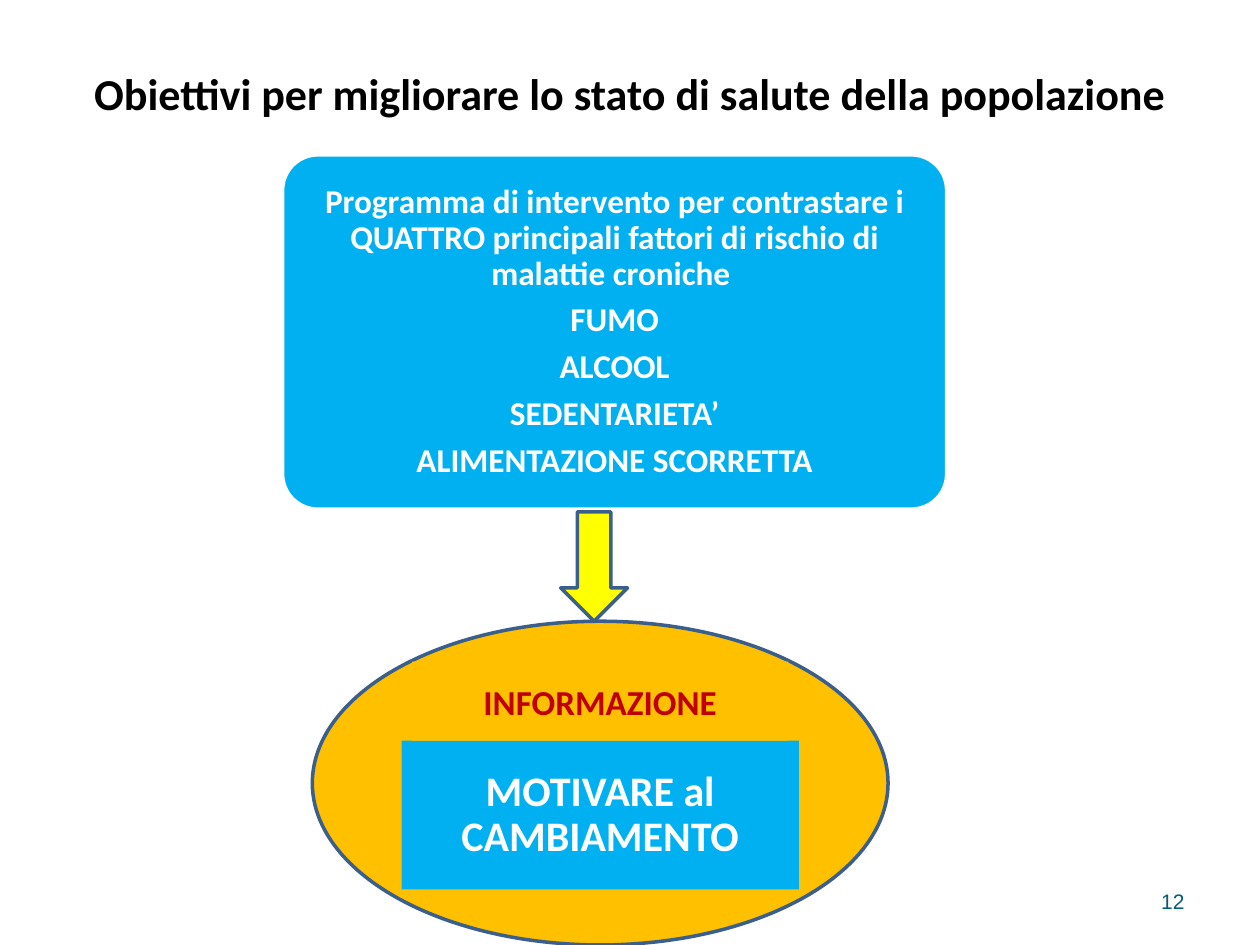
from pptx import Presentation
from pptx.dml.color import RGBColor
from pptx.enum.shapes import MSO_SHAPE as Shape
from pptx.enum.text import MSO_ANCHOR as Anchor, MSO_AUTO_SIZE as AutoSize, PP_ALIGN as Align
from pptx.util import Pt

COLORS = {
    "black": "000000",
    "white": "FFFFFF",
    "blue": "00B0F0",
    "orange": "FFC000",
    "yellow": "FFFF00",
    "outline": "3A5F8C",
    "red": "C00000",
    "teal": "045C75",
}

PROGRAMME = [
    "Programma di intervento per contrastare i QUATTRO principali "
    "fattori di rischio di malattie croniche ",
    "FUMO",
    "ALCOOL",
    "SEDENTARIETA’",
    "ALIMENTAZIONE SCORRETTA",
]


def rgb(name):
    return RGBColor.from_string(COLORS[name])


def write(shape, lines, size, color, font="Calibri", bold=True,
          align=Align.CENTER, inset=7.2, spacing=1.0, after=0):
    frame = shape.text_frame
    frame.word_wrap = True
    frame.auto_size = AutoSize.NONE
    frame.vertical_anchor = Anchor.MIDDLE
    frame.margin_left = frame.margin_right = Pt(inset)
    frame.margin_top = frame.margin_bottom = Pt(min(inset, 3.6))
    frame.text = "\n".join(lines)
    for paragraph in frame.paragraphs:
        paragraph.alignment = align
        paragraph.line_spacing = spacing
        paragraph.space_after = Pt(after)
        paragraph.font.name = font
        paragraph.font.size = Pt(size)
        paragraph.font.bold = bold
        paragraph.font.color.rgb = rgb(color)


def place_title(slide, box, text):
    title = slide.shapes.title
    title.left, title.top, title.width, title.height = map(Pt, box)
    write(title, [text], 25.2, "black")


def add_block(slide, kind, box, fill, line=None):
    """Add a filled preset shape, outlined only if a line colour is given."""
    block = slide.shapes.add_shape(kind, *map(Pt, box))
    block.shadow.inherit = False
    block.fill.solid()
    block.fill.fore_color.rgb = rgb(fill)
    if line:
        block.line.color.rgb = rgb(line)
        block.line.width = Pt(2)
    else:
        block.line.fill.background()
    return block


def add_page_number(slide, box, number):
    page = slide.shapes.add_textbox(*map(Pt, box))
    write(page, [number], 12, "teal", font="Arial", bold=False, align=Align.RIGHT)


def main():
    deck = Presentation()
    deck.slide_width, deck.slide_height = Pt(720), Pt(540)
    slide = deck.slides.add_slide(deck.slide_layouts.get_by_name("Title Only"))

    place_title(slide, (24, 18, 672, 70.5),
                "Obiettivi per migliorare lo stato di salute della popolazione")

    programme = add_block(slide, Shape.ROUNDED_RECTANGLE,
                          (161.5, 88.5, 379.5, 202.5), "blue", "white")
    programme.adjustments[0] = 0.1
    write(programme, PROGRAMME, 19, "white", inset=0, spacing=0.9, after=6.2)

    add_block(slide, Shape.OVAL, (178.5, 355, 329, 185), "orange", "outline")

    motivation = add_block(slide, Shape.RECTANGLE, (229.5, 423.2, 227, 85), "blue")
    write(motivation, ["MOTIVARE al CAMBIAMENTO"], 24, "white", spacing=0.9)

    add_block(slide, Shape.DOWN_ARROW, (320.4, 292.5, 38.2, 62.5), "yellow", "outline")

    information = add_block(slide, Shape.RECTANGLE, (235.5, 378, 215, 45.2), "orange")
    write(information, ["INFORMAZIONE"], 20, "red")

    add_page_number(slide, (516, 500.5, 168, 28.8), "12")
    deck.save("out.pptx")


if __name__ == "__main__":
    main()
